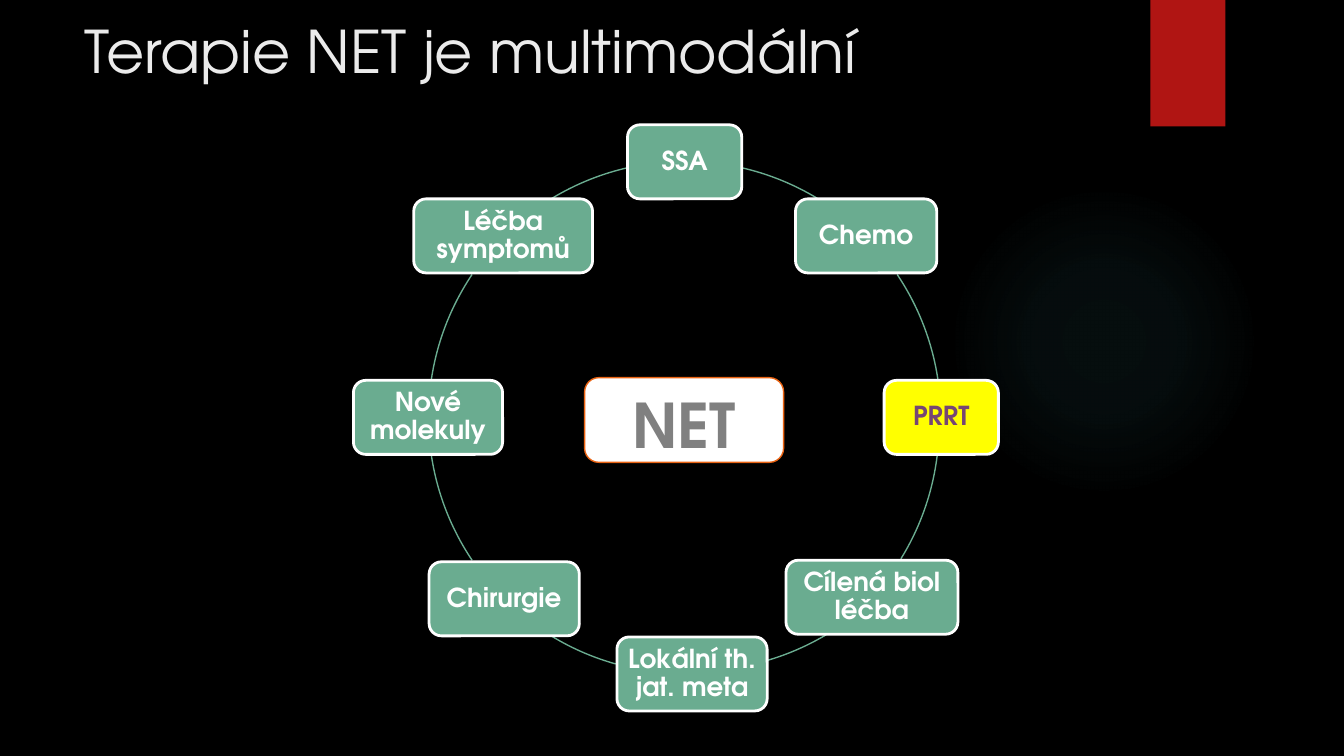
import dataclasses

import pptx
import pptx.dml.color
import pptx.enum.shapes
import pptx.enum.text
import pptx.oxml
import pptx.oxml.ns
import pptx.util

Cm = pptx.util.Cm
Pt = pptx.util.Pt
SHAPE = pptx.enum.shapes.MSO_SHAPE
ALIGN = pptx.enum.text.PP_ALIGN
ANCHOR = pptx.enum.text.MSO_ANCHOR


@dataclasses.dataclass(frozen=True)
class Theme:
    font: str = "TeX Gyre Adventor"
    background: str = "000000"
    glow: str = "50B9C1"
    ribbon: str = "B01513"
    therapy: str = "6AAC90"
    highlight: str = "FFFF00"
    highlight_text: str = "764674"
    white: str = "FFFFFF"
    hub_line: str = "EA6312"
    hub_text: str = "808080"
    title_text: str = "EBEBEB"
    title_size: float = 31.5
    hub_size: float = 33
    therapy_size: float = 14
    thin: float = 0.75
    outline: float = 1.5


theme = Theme()
rgb = pptx.dml.color.RGBColor.from_string


def add_block(kind, left, top, width, height, fill=None, line=None, weight=theme.thin):
    block = slide.shapes.add_shape(kind, Cm(left), Cm(top), Cm(width), Cm(height))
    block.shadow.inherit = False
    if fill:
        block.fill.solid()
        block.fill.fore_color.rgb = rgb(fill)
    else:
        block.fill.background()
    if line:
        block.line.color.rgb = rgb(line)
        block.line.width = Pt(weight)
    else:
        block.line.fill.background()
    return block


def write(frame, text, size, color, bold, align, anchor):
    frame.word_wrap = True
    frame.vertical_anchor = anchor
    paragraph = frame.paragraphs[0]
    paragraph.alignment = align
    run = paragraph.add_run()
    run.text = text
    run.font.name = theme.font
    run.font.size = Pt(size)
    run.font.bold = bold
    run.font.color.rgb = rgb(color)
    return paragraph


deck = pptx.Presentation()
deck.slide_width = Cm(25.4)
deck.slide_height = Cm(14.29)
slide = deck.slides.add_slide(deck.slide_layouts[6])
slide.background.fill.solid()
slide.background.fill.fore_color.rgb = rgb(theme.background)

glow = add_block(SHAPE.OVAL, 17.93, 3.51, 5.87, 5.87)
stops = "".join(
    f'<a:gs pos="{position}000"><a:srgbClr val="{theme.glow}">'
    f'<a:alpha val="{alpha}000"/></a:srgbClr></a:gs>'
    for position, alpha in [(0, 7), (36, 6), (69, 0)]
)
gradient = pptx.oxml.parse_xml(
    f'<a:gradFill {pptx.oxml.ns.nsdecls("a")}><a:gsLst>{stops}</a:gsLst>'
    '<a:path path="circle"><a:fillToRect l="50000" t="50000" r="50000" b="50000"/>'
    "</a:path></a:gradFill>"
)
no_fill = glow.element.spPr.find(pptx.oxml.ns.qn("a:noFill"))
glow.element.spPr.replace(no_fill, gradient)

add_block(SHAPE.RECTANGLE, 21.74, 0, 1.42, 2.39, theme.ribbon)

ring_diameter = 9.68
ring_x, ring_y = 12.94, 7.89
arcs = [
    (283, 301.5, 0, 0),
    (326.1, 351.4, 0, 0),
    (7.1, 31.7, -0.03, 0.13),
    (59.2, 73.7, 0.2, -0.05),
    (105.6, 121.5, 0, 0),
    (146.1, 171.4, 0, 0),
    (188.6, 213.9, 0, 0),
    (238.5, 257.1, 0, 0),
]
for start, end, shift_x, shift_y in arcs:
    arc = add_block(
        SHAPE.ARC,
        ring_x - ring_diameter / 2 + shift_x,
        ring_y - ring_diameter / 2 + shift_y,
        ring_diameter,
        ring_diameter,
        line=theme.therapy,
    )
    arc.adjustments[0] = start * 0.6
    arc.adjustments[1] = end * 0.6

therapy_height = 1.4
therapies = [
    ("SSA", 12.94, 3.06, 2.16),
    ("Chemo", 16.37, 4.46, 2.67),
    ("PRRT", 17.79, 7.89, 2.16),
    ("Cílená biol léčba", 16.48, 11.29, 3.25),
    ("Lokální th. jat. meta", 13.08, 12.74, 2.84),
    ("Chirurgie", 9.53, 11.32, 2.84),
    ("Nové molekuly", 8.09, 7.89, 2.82),
    ("Léčba symptomů", 9.51, 4.46, 3.38),
]
for name, center_x, center_y, width in therapies:
    highlighted = name == "PRRT"
    therapy = add_block(
        SHAPE.ROUNDED_RECTANGLE,
        center_x - width / 2,
        center_y - therapy_height / 2,
        width,
        therapy_height,
        theme.highlight if highlighted else theme.therapy,
        theme.white,
        theme.outline,
    )
    frame = therapy.text_frame
    frame.margin_left = frame.margin_right = Cm(0.05)
    frame.margin_top = frame.margin_bottom = Cm(0.05)
    color = theme.highlight_text if highlighted else theme.white
    label = write(frame, name, theme.therapy_size, color, True, ALIGN.CENTER, ANCHOR.MIDDLE)
    label.line_spacing = 0.9

add_block(SHAPE.ROUNDED_RECTANGLE, 11.05, 7.14, 3.76, 1.6, theme.white, theme.hub_line)

title = slide.shapes.add_textbox(Cm(1.35), Cm(0.15), Cm(19.58), Cm(3.71))
write(title.text_frame, "Terapie NET je multimodální", theme.title_size,
      theme.title_text, False, ALIGN.LEFT, ANCHOR.TOP)

hub = slide.shapes.add_textbox(Cm(11.05), Cm(7.19), Cm(3.76), Cm(1.68))
write(hub.text_frame, "NET", theme.hub_size, theme.hub_text, True, ALIGN.CENTER, ANCHOR.TOP)

deck.save("out.pptx")
